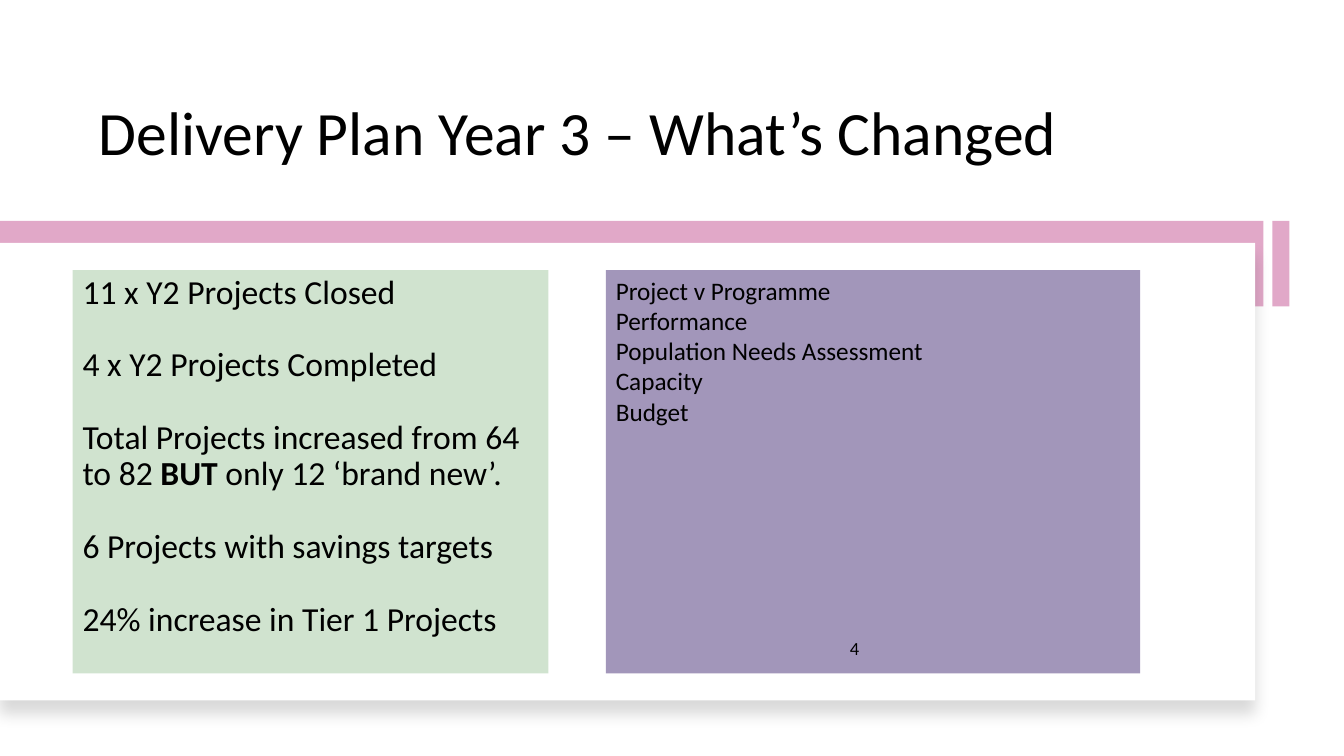
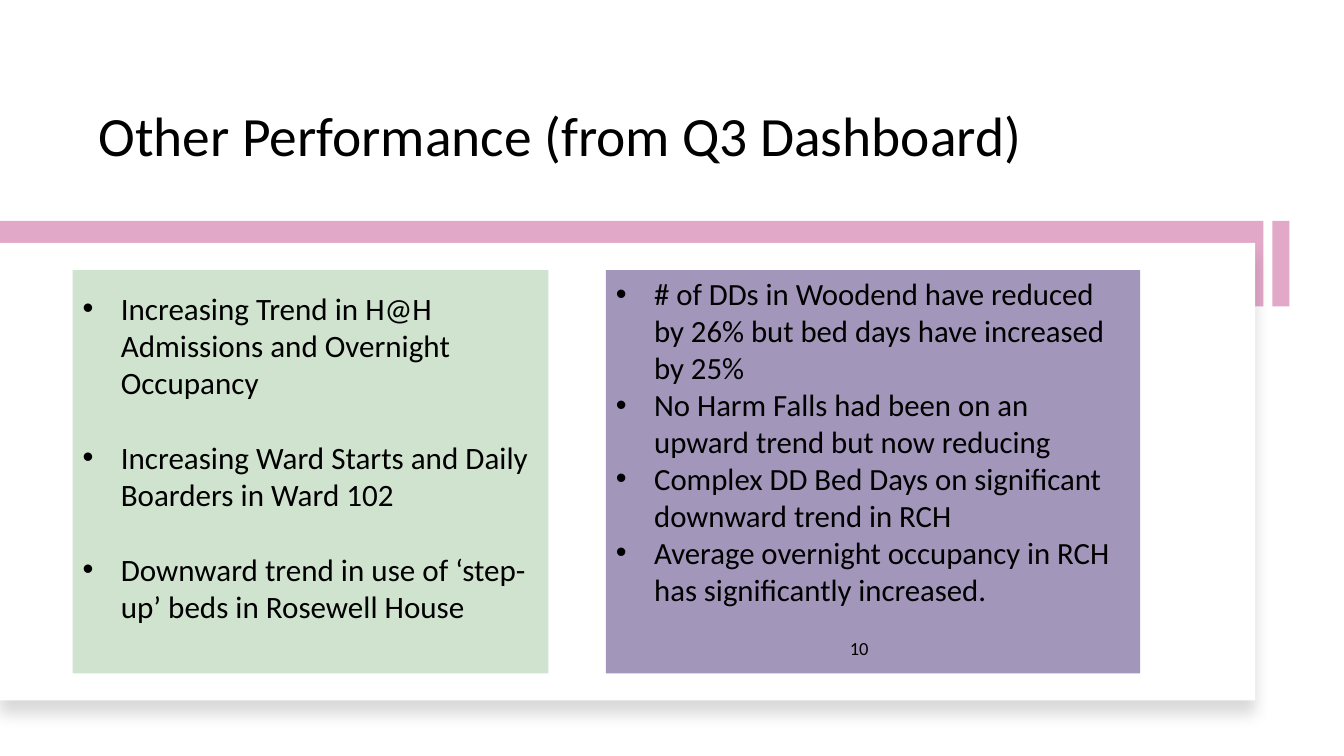
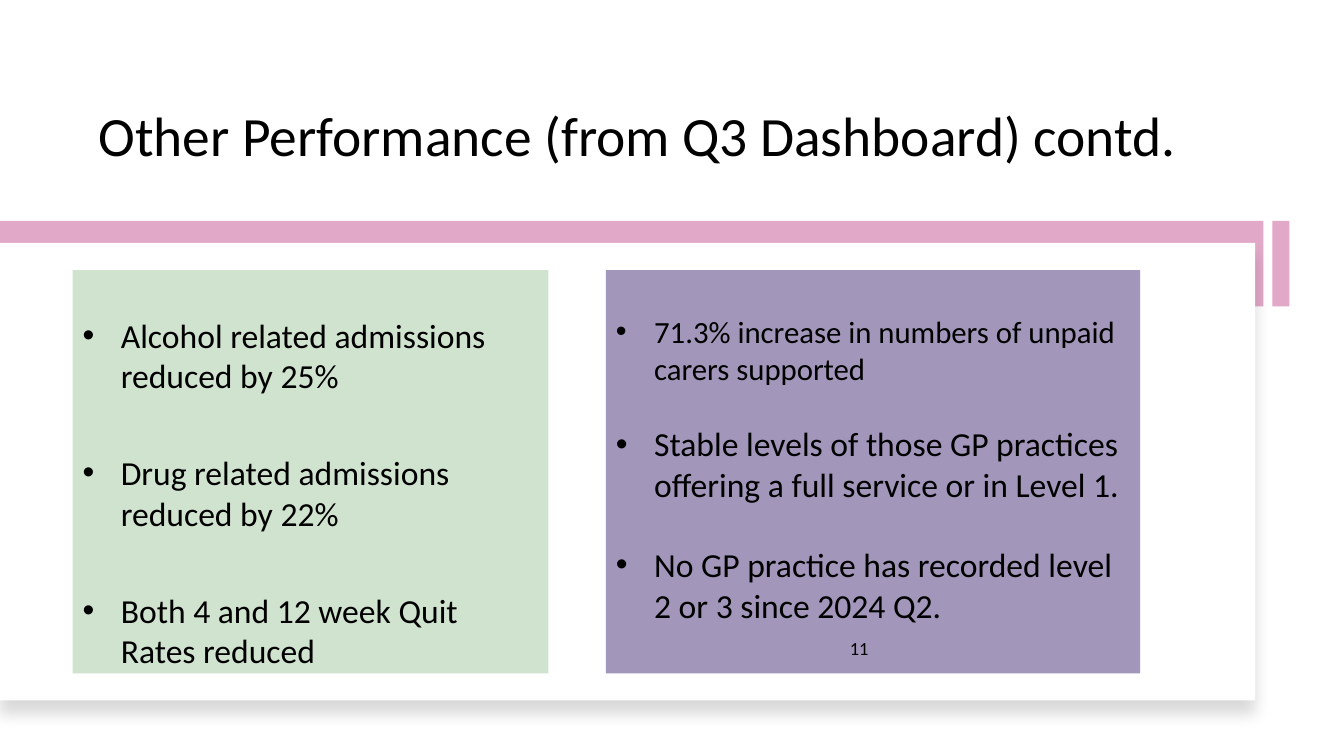
from lxml import etree
from pptx import Presentation
from pptx.dml.color import RGBColor
from pptx.enum.shapes import MSO_SHAPE as Shape
from pptx.enum.text import MSO_ANCHOR as Anchor, PP_ALIGN as Align
from pptx.oxml.ns import qn
from pptx.util import Inches, Pt

FONT = "Calibri"
BLACK, WHITE, PINK, GREEN, PURPLE = "000000", "FFFFFF", "E1A8C8", "D0E3CF", "A296BA"
INDENT = 0.38
LEFT_PANEL = (0.72, 2.68, 4.72, 4, GREEN)
RIGHT_PANEL = (6.01, 2.68, 5.3, 4, PURPLE)

# Each panel: items are (text, size, space after); *stars* mark bold
SLIDES = [
    {
        "title": ("Delivery Plan Year 3 – What’s Changed", 44),
        "number": "4",
        "left": {"spacing": 0.9, "items": [
            ("11 x Y2 Projects Closed", 24, 26),
            ("4 x Y2 Projects Completed", 24, 26),
            ("Total Projects increased from 64 to 82 *BUT* only 12 ‘brand new’.", 24, 26),
            ("6 Projects with savings targets", 24, 26),
            ("24% increase in Tier 1 Projects", 24, 0),
        ]},
        "right": {"items": [
            ("Project v Programme", 18, 0),
            ("Performance", 18, 0),
            ("Population Needs Assessment", 18, 0),
            ("Capacity", 18, 0),
            ("Budget", 18, 0),
        ]},
    },
    {
        "title": ("Other Performance (from Q3 Dashboard)", 39.6),
        "number": "10",
        "left": {"bullets": True, "top": 0.19, "items": [
            ("Increasing Trend in H@H Admissions and Overnight Occupancy", 22.2, 26.6),
            ("Increasing Ward Starts and Daily Boarders in Ward 102", 22.2, 26.6),
            ("Downward trend in use of ‘step-up’ beds in Rosewell House", 22.2, 0),
        ]},
        "right": {"bullets": True, "items": [
            ("# of DDs in Woodend have reduced by 26% but bed days have increased by 25%", 22, 0),
            ("No Harm Falls had been on an upward trend but now reducing", 22, 0),
            ("Complex DD Bed Days on significant downward trend in RCH", 22, 0),
            ("Average overnight occupancy in RCH has significantly increased.", 22, 0),
        ]},
    },
    {
        "title": ("Other Performance (from Q3 Dashboard) contd.", 39.6),
        "number": "11",
        "left": {"bullets": True, "top": 0.44, "items": [
            ("Alcohol related admissions reduced by 25%", 24, 40.8),
            ("Drug related admissions reduced by 22%", 24, 40.8),
            ("Both 4 and 12 week Quit Rates reduced", 24, 0),
        ]},
        "right": {"bullets": True, "top": 0.42, "items": [
            ("71.3% increase in numbers of unpaid carers supported", 22, 26.4),
            ("Stable levels of those GP practices offering a full service or in Level 1.", 24, 28.8),
            ("No GP practice has recorded level 2 or 3 since 2024 Q2.", 24, 0),
        ]},
    },
]


def color(value):
    return RGBColor.from_string(value)


def add_rect(page, left, top, width, height, fill):
    box = page.shapes.add_shape(
        Shape.RECTANGLE, Inches(left), Inches(top), Inches(width), Inches(height))
    box.shadow.inherit = False
    box.fill.solid()
    box.fill.fore_color.rgb = color(fill)
    box.line.fill.background()
    return box


def add_soft_shadow(box):
    effects = box._element.spPr.find(qn("a:effectLst"))
    shadow = etree.SubElement(
        effects, qn("a:outerShdw"), blurRad=str(Pt(11)), dist=str(Pt(10)),
        dir=str(90 * 60000), algn="t", rotWithShape="0")
    tint = etree.SubElement(shadow, qn("a:srgbClr"), val=BLACK)
    etree.SubElement(tint, qn("a:alpha"), val="15000")


def write(para, text, size, spacing=1.0, after=0):
    para.alignment = Align.LEFT
    para.line_spacing = spacing
    para.space_after = Pt(after)
    for index, part in enumerate(text.split("*")):
        span = para.add_run()
        span.text = part
        span.font.name = FONT
        span.font.size = Pt(size)
        span.font.bold = index % 2 == 1
        span.font.color.rgb = color(BLACK)


def add_bullet(para):
    props = para._p.get_or_add_pPr()
    props.set("marL", str(Inches(INDENT)))
    props.set("indent", str(-Inches(INDENT)))
    etree.SubElement(props, qn("a:buFont"), typeface="Arial")
    etree.SubElement(props, qn("a:buChar"), char="•")


def add_label(page, place, text, size, spacing, anchor):
    frame = page.shapes.add_textbox(*map(Inches, place)).text_frame
    frame.word_wrap = True
    frame.vertical_anchor = anchor
    write(frame.paragraphs[0], text, size, spacing)


def add_panel(page, place, content):
    frame = add_rect(page, *place).text_frame
    frame.word_wrap = True
    frame.vertical_anchor = Anchor.TOP
    frame.margin_top = Inches(content.get("top", 0.05))
    for index, (text, size, after) in enumerate(content["items"]):
        para = frame.add_paragraph() if index else frame.paragraphs[0]
        write(para, text, size, content.get("spacing", 1.0), after)
        if content.get("bullets"):
            add_bullet(para)


def add_backdrop(page):
    add_rect(page, 12.62, 2.19, 0.17, 0.85, PINK)
    add_rect(page, 0, 2.19, 12.53, 0.85, PINK)
    add_soft_shadow(add_rect(page, 0, 2.41, 12.45, 4.54, WHITE))


def main():
    deck = Presentation()
    deck.slide_width, deck.slide_height = Inches(13.33), Inches(7.5)
    for content in SLIDES:
        page = deck.slides.add_slide(deck.slide_layouts[6])
        add_label(page, (0.88, 0.42, 11.11, 1.3), *content["title"], 0.9, Anchor.BOTTOM)
        add_backdrop(page)
        add_panel(page, RIGHT_PANEL, content["right"])
        add_panel(page, LEFT_PANEL, content["left"])
        add_label(page, (8.33, 6.33, 2.09, 0.27), content["number"], 13.2, 0.7, Anchor.TOP)
    deck.save("out.pptx")


if __name__ == "__main__":
    main()
